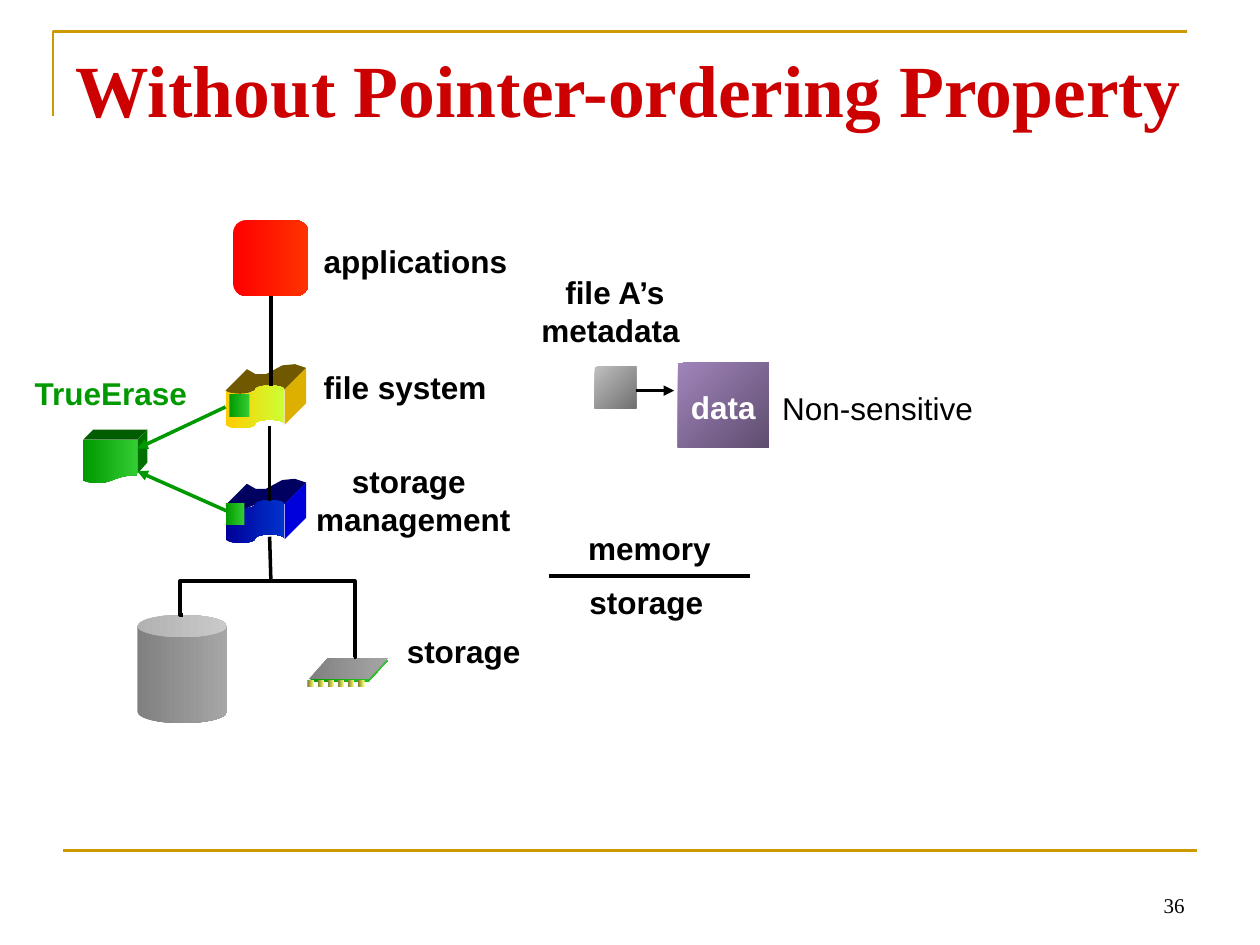
from lxml import etree
from pptx import Presentation
from pptx.dml.color import RGBColor
from pptx.enum.shapes import MSO_CONNECTOR, MSO_SHAPE
from pptx.enum.text import MSO_ANCHOR, MSO_AUTO_SIZE, PP_ALIGN
from pptx.oxml.ns import qn
from pptx.util import Inches, Pt

BLACK = RGBColor(0, 0, 0)
WHITE = RGBColor(255, 255, 255)
GOLD = RGBColor(0xCC, 0x99, 0x00)
TITLE_RED = RGBColor(0xCC, 0x00, 0x00)
GREEN = RGBColor(0x00, 0x99, 0x00)
DARK_GREEN = RGBColor(0x00, 0x5C, 0x00)
SIDE_GREEN = RGBColor(0x00, 0x70, 0x00)
BROWN = RGBColor(0x70, 0x58, 0x00)
OCHRE = RGBColor(0xDD, 0xB0, 0x00)
NAVY = RGBColor(0x00, 0x00, 0x60)
BLUE = RGBColor(0x00, 0x00, 0xDD)
GREEN_BLEND = (GREEN, RGBColor(0x33, 0xCC, 0x33))
RED_BLEND = (RGBColor(0xFF, 0, 0), RGBColor(0xFF, 0x33, 0))
GRAY_BLEND = (RGBColor(0x80, 0x80, 0x80), RGBColor(0xA6, 0xA6, 0xA6))
PIN_BLEND = (RGBColor(0x76, 0x76, 0x2F), RGBColor(0xFF, 0xFF, 0x66))
BLUE_BLEND = (RGBColor(0, 0, 0x99), RGBColor(0, 0x33, 0xCC))
YELLOW_BLEND = (RGBColor(0xFF, 0xCC, 0), RGBColor(0xCC, 0xFF, 0x33))
METADATA_BLEND = (RGBColor(0xBF, 0xBF, 0xBF), RGBColor(0x71, 0x71, 0x71))
DATA_BLEND = (RGBColor(0xA0, 0x84, 0xBB), RGBColor(0x5F, 0x4E, 0x6F))

deck = Presentation()
deck.slide_width, deck.slide_height = Inches(10), Inches(7.5)
page = deck.slides.add_slide(deck.slide_layouts[5])


def add_block(kind, place, blend, angle=0):
    """Preset shape with a two-colour gradient and no outline."""
    block = page.shapes.add_shape(kind, *map(Inches, place))
    block.shadow.inherit = False
    block.line.fill.background()
    block.fill.gradient()
    block.fill.gradient_angle = angle
    for stop, color in zip(block.fill.gradient_stops, blend):
        stop.color.rgb = color
    return block


def add_line(start, end, color=BLACK, width=2, arrow=False, bend=None):
    """Straight line, or an elbow whose middle leg lies at the share bend."""
    kind = MSO_CONNECTOR.STRAIGHT if bend is None else MSO_CONNECTOR.ELBOW
    line = page.shapes.add_connector(kind, *map(Inches, start + end))
    line.line.color.rgb = color
    line.line.width = Pt(width)
    properties = line._element.spPr
    if arrow:
        etree.SubElement(line.line._get_or_add_ln(), qn("a:tailEnd"), type="triangle")
    if bend is not None:
        guides = properties.find(qn("a:prstGeom")).get_or_add_avLst()
        etree.SubElement(guides, qn("a:gd"), name="adj1", fmla=f"val {round(bend * 100000)}")
    etree.SubElement(properties, qn("a:effectLst"))


# Frame of the page
corner = page.shapes.build_freeform(Inches(0.42), Inches(0.92), scale=1.0)
corner.add_line_segments([(Inches(0.42), Inches(0.25)), (Inches(9.42), Inches(0.25))], close=False)
frame = corner.convert_to_shape()
frame.shadow.inherit = False
frame.fill.background()
frame.line.color.rgb = GOLD
frame.line.width = Pt(1.5)
add_line((0.5, 6.75), (9.5, 6.75), GOLD, 1.5)

# Title
title = page.shapes.title
title.left, title.top, title.width, title.height = map(Inches, (0.5, 0.3, 9, 1.5))
title.text_frame.text = "Without Pointer-ordering Property"
title.text_frame.auto_size = MSO_AUTO_SIZE.NONE
title.text_frame.vertical_anchor = MSO_ANCHOR.TOP
para = title.text_frame.paragraphs[0]
para.alignment = PP_ALIGN.LEFT
for name, value in {"name": "Times New Roman", "size": Pt(42), "bold": True}.items():
    setattr(para.font, name, value)
para.font.color.rgb = TITLE_RED

# Metadata pointing to data
add_block(MSO_SHAPE.RECTANGLE, (4.72, 2.91, 0.33, 0.33), METADATA_BLEND, 315)
add_block(MSO_SHAPE.RECTANGLE, (5.38, 2.88, 0.72, 0.67), DATA_BLEND, 315)
add_line((5.05, 3.1), (5.35, 3.1), arrow=True)

# Top and right faces of the solid blocks, as offsets from each block's corner
TAPE_TOP = [(0, 0.04), (0.06, 0.08), (0.15, 0.07), (0.3, 0.01), (0.4, 0), (0.47, 0.03),
            (0.64, -0.14), (0.55, -0.17), (0.45, -0.16), (0.32, -0.09), (0.24, -0.09), (0.17, -0.13)]
TAPE_SIDE = [(0.47, 0.03), (0.64, -0.14), (0.64, 0.14), (0.47, 0.31)]
DOCUMENT_TOP = [(0, 0), (0.08, -0.08), (0.51, -0.08), (0.43, 0)]
DOCUMENT_SIDE = [(0.43, 0), (0.51, -0.08), (0.51, 0.18), (0.43, 0.27)]
for left, top, outline, color in [
    (1.79, 3.06, TAPE_TOP, BROWN), (1.79, 3.06, TAPE_SIDE, OCHRE),
    (1.79, 3.97, TAPE_TOP, NAVY), (1.79, 3.97, TAPE_SIDE, BLUE),
    (0.66, 3.49, DOCUMENT_TOP, DARK_GREEN), (0.66, 3.49, DOCUMENT_SIDE, SIDE_GREEN),
]:
    points = [(Inches(left + x), Inches(top + y)) for x, y in outline]
    builder = page.shapes.build_freeform(*points[0], scale=1.0)
    builder.add_line_segments(points[1:])
    face = builder.convert_to_shape()
    face.shadow.inherit = False
    face.fill.solid()
    face.fill.fore_color.rgb = color
    face.line.fill.background()

# Storage stack
add_block(MSO_SHAPE.ROUNDED_RECTANGLE, (1.85, 1.75, 0.6, 0.6), RED_BLEND)
add_block(MSO_SHAPE.CAN, (1.09, 4.88, 0.71, 0.86), GRAY_BLEND)
for top, blend in [(5.24, GREEN_BLEND), (5.22, GRAY_BLEND)]:
    chip = add_block(MSO_SHAPE.PARALLELOGRAM, (2.45, top, 0.63, 0.17), blend)
    chip.adjustments[0] = 0.91
for pin in range(6):
    add_block(MSO_SHAPE.RECTANGLE, (2.44 + 0.08 * pin, 5.4, 0.05, 0.05), PIN_BLEND)
add_block(MSO_SHAPE.FLOWCHART_PUNCHED_TAPE, (1.79, 3.97, 0.47, 0.34), BLUE_BLEND)
add_block(MSO_SHAPE.FLOWCHART_PUNCHED_TAPE, (1.79, 3.06, 0.47, 0.34), YELLOW_BLEND)
add_block(MSO_SHAPE.FLOWCHART_DOCUMENT, (0.66, 3.49, 0.43, 0.35), GREEN_BLEND)

# Links of the stack
for start, end in [((2.15, 2.35), (2.15, 3.06)), ((2.14, 3.38), (2.14, 3.98)),
                   ((2.14, 4.26), (2.15, 4.61))]:
    add_line(start, end)
add_line((2.15, 4.61), (2.81, 5.22), bend=1.01)
add_line((2.15, 4.61), (1.45, 4.88), bend=1.03)
for start, end in [((1.79, 3.23), (1.09, 3.56)), ((1.81, 4.06), (1.09, 3.74))]:
    add_line(start, end, GREEN, arrow=True)
add_block(MSO_SHAPE.RECTANGLE, (1.79, 3.99, 0.15, 0.18), GREEN_BLEND)
add_block(MSO_SHAPE.RECTANGLE, (1.82, 3.13, 0.16, 0.18), GREEN_BLEND)

# Border between memory and storage
add_line((4.36, 4.57), (5.95, 4.57), width=2.25)

# Labels
LEFT, CENTER, RIGHT = PP_ALIGN.LEFT, PP_ALIGN.CENTER, PP_ALIGN.RIGHT
bold = {"name": "Arial", "size": Pt(18), "bold": True}
regular = bold | {"bold": False}
number = {"name": "Times New Roman", "size": Pt(12)}
for place, lines, align, style, color in [
    ((4.19, 2.12, 1.38, 0.71), ["file A’s", "metadata "], CENTER, bold, BLACK),
    ((5.38, 3.03, 0.72, 0.4), ["data"], CENTER, bold, WHITE),
    ((2.47, 1.87, 2.1, 0.51), ["applications"], LEFT, bold, BLACK),
    ((2.47, 2.87, 1.89, 0.51), ["file system"], LEFT, bold, BLACK),
    ((2.4, 3.62, 1.76, 0.71), ["storage ", "management"], CENTER, bold, BLACK),
    ((3.13, 4.97, 1.49, 0.51), ["storage"], LEFT, bold, BLACK),
    ((0.17, 2.92, 1.42, 0.4), ["TrueErase"], CENTER, bold, GREEN),
    ((4.57, 4.15, 1.18, 0.4), ["memory"], LEFT, bold, BLACK),
    ((4.58, 4.58, 1.11, 0.4), ["storage"], LEFT, bold, BLACK),
    ((6.11, 3.04, 1.73, 0.4), ["Non-sensitive"], LEFT, regular, BLACK),
    ((7.17, 6.83, 2.33, 0.5), ["36"], RIGHT, number, BLACK),
]:
    box = page.shapes.add_textbox(*map(Inches, place))
    text = box.text_frame
    text.word_wrap = True
    text.margin_left = Inches(0 if align == CENTER else 0.1)
    text.margin_right = Inches(0.1 if align == RIGHT else 0)
    text.vertical_anchor = MSO_ANCHOR.BOTTOM if align == RIGHT else MSO_ANCHOR.TOP
    text.text = "\n".join(lines)
    for para in text.paragraphs:
        para.alignment = align
        for name, value in style.items():
            setattr(para.font, name, value)
        para.font.color.rgb = color

deck.save("out.pptx")
